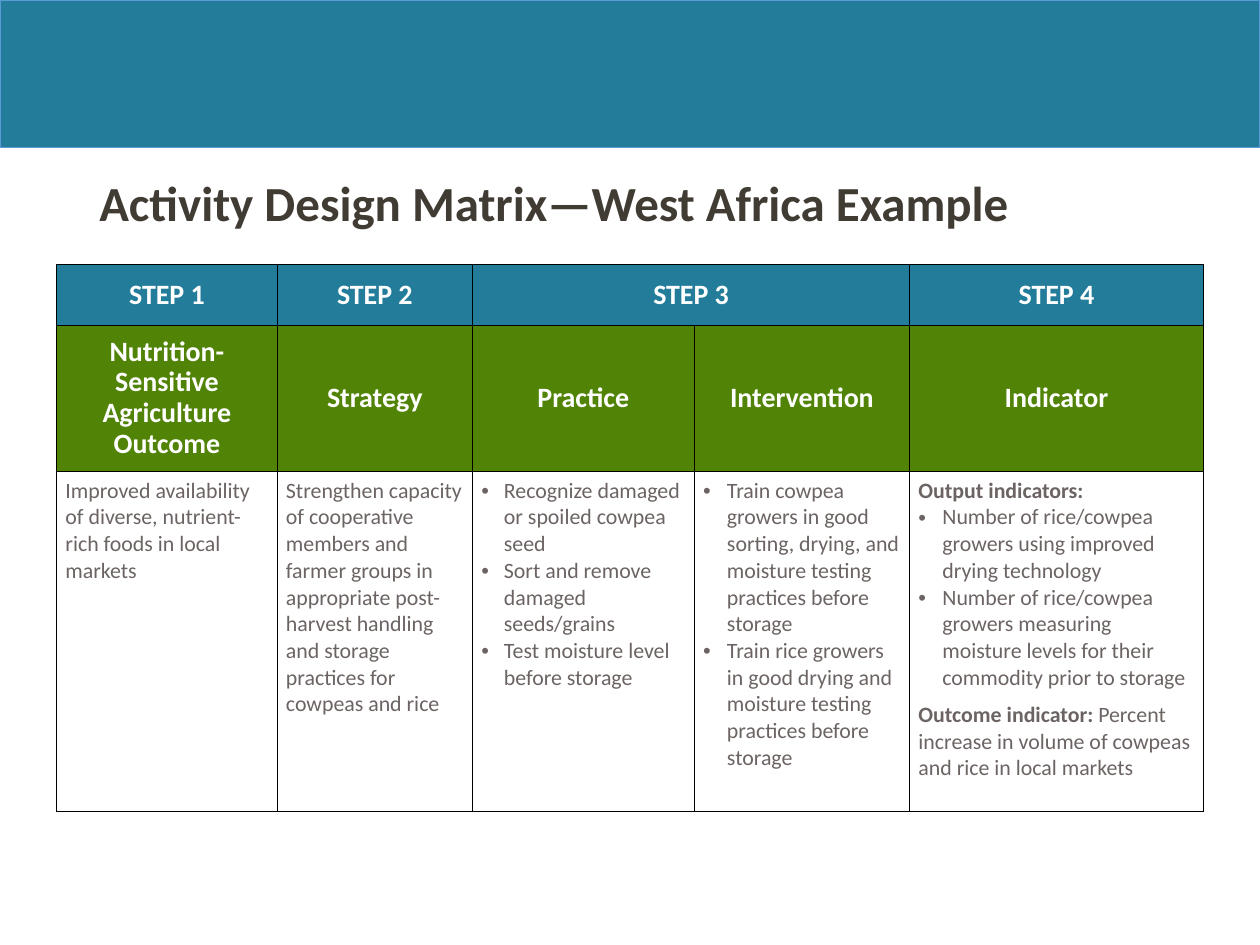
from dataclasses import dataclass

from lxml.etree import SubElement
from pptx import Presentation
from pptx.dml.color import RGBColor
from pptx.enum.shapes import MSO_SHAPE
from pptx.enum.text import MSO_ANCHOR, PP_ALIGN
from pptx.oxml.ns import qn
from pptx.util import Inches, Pt


@dataclass(frozen=True)
class Theme:
    font: str = "Calibri"
    teal: str = "227C9A"
    green: str = "518307"
    banner_line: str = "5B9BD5"
    title: str = "403B33"
    header: str = "FFFFFF"
    body: str = "6C6463"
    border: str = "000000"
    hairline: float = 0.5
    title_size: float = 28
    header_size: float = 16
    body_size: float = 12.5


@dataclass(frozen=True)
class Entry:
    """One paragraph of a body cell: a bold lead, then plain text."""
    text: str = ""
    lead: str = ""
    indent: float = 0
    space_after: float = 0


THEME = Theme()

COLUMN_WIDTHS = (1.75, 1.55, 1.76, 1.71, 2.33)
ROW_HEIGHTS = (0.48, 1.16, 2.7)
STEPS = ("STEP 1", "STEP 2", "STEP 3", None, "STEP 4")
HEADINGS = ("Nutrition-Sensitive Agriculture Outcome", "Strategy", "Practice",
            "Intervention", "Indicator")
DETAILS = (
    [Entry("Improved availability of diverse, nutrient-rich foods in local markets")],
    [Entry("Strengthen capacity of cooperative members and farmer groups in "
           "appropriate post-harvest handling and storage practices for "
           "cowpeas and rice")],
    [Entry("Recognize damaged or spoiled cowpea seed", indent=0.18),
     Entry("Sort and remove damaged seeds/grains", indent=0.18),
     Entry("Test moisture level before storage", indent=0.18)],
    [Entry("Train cowpea growers in good sorting, drying, and moisture testing "
           "practices before storage", indent=0.19),
     Entry("Train rice growers in good drying and moisture testing practices "
           "before storage", indent=0.19)],
    [Entry(lead="Output indicators:"),
     Entry("Number of rice/cowpea growers using improved drying technology",
           indent=0.19),
     Entry("Number of rice/cowpea growers measuring moisture levels for their "
           "commodity prior to storage", indent=0.19, space_after=6),
     Entry("Percent increase in volume of cowpeas and rice in local markets",
           lead="Outcome indicator: ")],
)


def rgb(color):
    return RGBColor.from_string(color)


def style_font(font, size, color, bold):
    font.name = THEME.font
    font.size = Pt(size)
    font.color.rgb = rgb(color)
    font.bold = bold


def add_banner(slide, left, top, width, height):
    banner = slide.shapes.add_shape(MSO_SHAPE.RECTANGLE, left, top, width, height)
    banner.shadow.inherit = False
    banner.fill.solid()
    banner.fill.fore_color.rgb = rgb(THEME.teal)
    banner.line.color.rgb = rgb(THEME.banner_line)
    banner.line.width = Pt(THEME.hairline)


def add_title(slide, left, top, width, height):
    frame = slide.shapes.add_textbox(left, top, width, height).text_frame
    frame.word_wrap = True
    frame.text = "Activity Design Matrix—West Africa Example"
    heading = frame.paragraphs[0]
    heading.line_spacing = 0.9
    style_font(heading.runs[0].font, THEME.title_size, THEME.title, True)


def set_borders(cell):
    properties = cell._tc.get_or_add_tcPr()
    for side in ("a:lnL", "a:lnR", "a:lnT", "a:lnB"):
        edge = SubElement(properties, qn(side), w=str(Pt(THEME.hairline)))
        fill = SubElement(edge, qn("a:solidFill"))
        SubElement(fill, qn("a:srgbClr"), val=THEME.border)


def set_bullet(paragraph, indent):
    properties = paragraph._p.get_or_add_pPr()
    properties.set("marL", str(Inches(indent)))
    properties.set("indent", str(-Inches(indent)))
    SubElement(properties, qn("a:buFont"), typeface="Arial")
    SubElement(properties, qn("a:buChar"), char="•")


def fill_header_cell(cell, label, color):
    cell.fill.solid()
    cell.fill.fore_color.rgb = rgb(color)
    if label is None:
        return
    cell.vertical_anchor = MSO_ANCHOR.MIDDLE
    cell.text_frame.text = label
    paragraph = cell.text_frame.paragraphs[0]
    paragraph.alignment = PP_ALIGN.CENTER
    paragraph.line_spacing = 0.9
    paragraph.space_after = Pt(10)
    style_font(paragraph.runs[0].font, THEME.header_size, THEME.header, True)


def fill_body_cell(cell, entries):
    cell.fill.background()
    frame = cell.text_frame
    for index, entry in enumerate(entries):
        paragraph = frame.add_paragraph() if index else frame.paragraphs[0]
        if entry.indent:
            set_bullet(paragraph, entry.indent)
        if entry.space_after:
            paragraph.space_after = Pt(entry.space_after)
        for text, bold in ((entry.lead, True), (entry.text, False)):
            if text:
                run = paragraph.add_run()
                run.text = text
                style_font(run.font, THEME.body_size, THEME.body, bold)


def add_matrix(slide, left, top, width, height):
    matrix = slide.shapes.add_table(len(ROW_HEIGHTS), len(COLUMN_WIDTHS),
                                    left, top, width, height).table
    matrix.first_row = matrix.horz_banding = False
    for column, column_width in zip(matrix.columns, COLUMN_WIDTHS):
        column.width = Inches(column_width)
    for row, row_height in zip(matrix.rows, ROW_HEIGHTS):
        row.height = Inches(row_height)
    for cell in matrix.iter_cells():
        cell.margin_left = cell.margin_right = Inches(0.07)
        cell.margin_top = cell.margin_bottom = Inches(0.05)
        set_borders(cell)
    for index, (step, heading, entries) in enumerate(zip(STEPS, HEADINGS, DETAILS)):
        fill_header_cell(matrix.cell(0, index), step, THEME.teal)
        fill_header_cell(matrix.cell(1, index), heading, THEME.green)
        fill_body_cell(matrix.cell(2, index), entries)
    matrix.cell(0, 2).merge(matrix.cell(0, 3))


def main():
    deck = Presentation()
    deck.slide_width, deck.slide_height = Inches(10), Inches(7.5)
    slide = deck.slides.add_slide(deck.slide_layouts[6])
    add_banner(slide, 0, 0, deck.slide_width, Inches(1.17))
    add_title(slide, Inches(0.69), Inches(1.37), Inches(8.62), Inches(1.2))
    add_matrix(slide, Inches(0.45), Inches(2.1),
               Inches(sum(COLUMN_WIDTHS)), Inches(sum(ROW_HEIGHTS)))
    deck.save("out.pptx")


if __name__ == "__main__":
    main()
